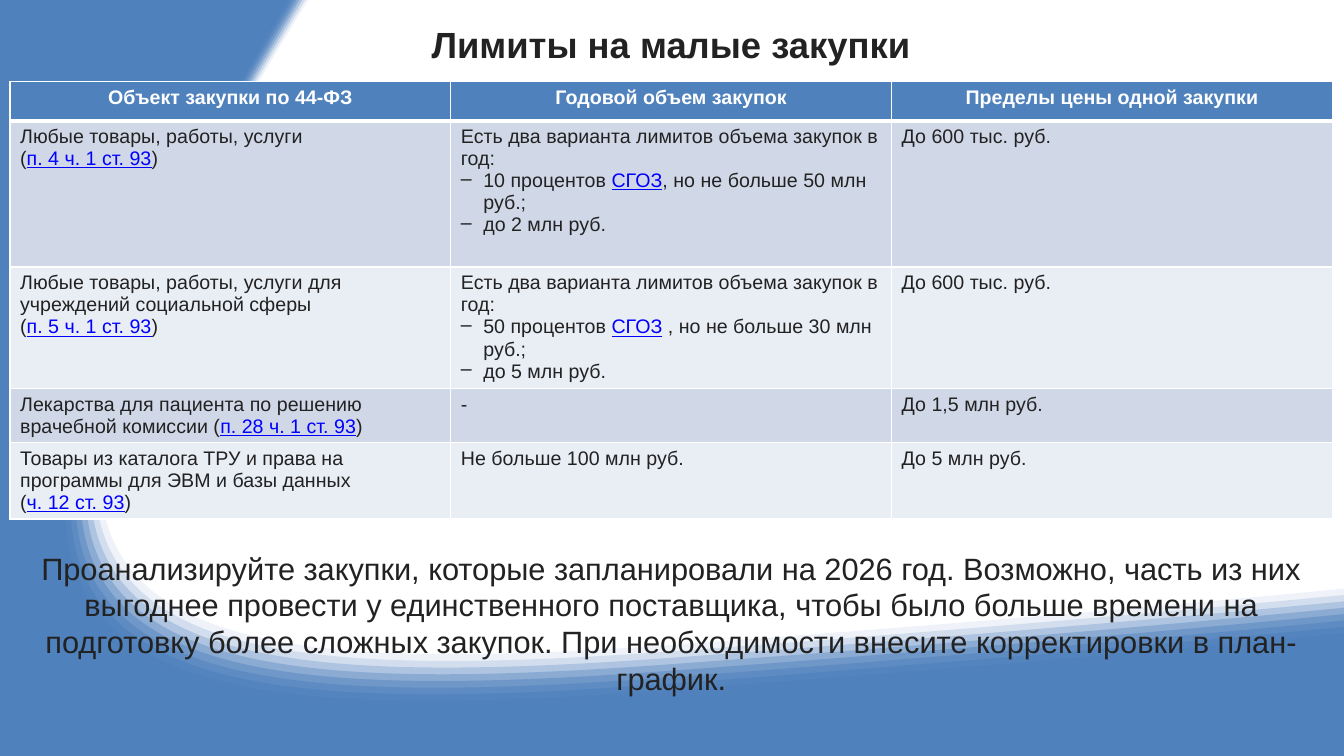
from dataclasses import dataclass

from lxml import etree
from pptx import Presentation
from pptx.dml.color import RGBColor
from pptx.enum.text import MSO_ANCHOR, MSO_AUTO_SIZE, PP_ALIGN
from pptx.oxml.ns import qn
from pptx.util import Pt

LEFT, CENTER = PP_ALIGN.LEFT, PP_ALIGN.CENTER
TOP, MIDDLE = MSO_ANCHOR.TOP, MSO_ANCHOR.MIDDLE
NO_AUTOFIT = MSO_AUTO_SIZE.NONE

# Text between bars is a reference; in a tuple, the items after the first are bulleted.
TITLE = "Лимиты на малые закупки"
HEADER = ("Объект закупки по 44-ФЗ", "Годовой объем закупок", "Пределы цены одной закупки")
LIMITS = [
    ("Любые товары, работы, услуги (|п. 4 ч. 1 ст. 93|)",
     ("Есть два варианта лимитов объема закупок в год:",
      "10 процентов |СГОЗ|, но не больше 50 млн руб.;",
      "до 2 млн руб."),
     "До 600 тыс. руб."),
    ("Любые товары, работы, услуги для учреждений социальной сферы (|п. 5 ч. 1 ст. 93|)",
     ("Есть два варианта лимитов объема закупок в год:",
      "50 процентов |СГОЗ| , но не больше 30 млн руб.;",
      "до 5 млн руб."),
     "До 600 тыс. руб."),
    ("Лекарства для пациента по решению врачебной комиссии (|п. 28 ч. 1 ст. 93|)",
     "-",
     "До 1,5 млн руб."),
    ("Товары из каталога ТРУ и права на программы для ЭВМ и базы данных (|ч. 12 ст. 93|)",
     "Не больше 100 млн руб.",
     "До 5 млн руб."),
]
ADVICE = ("Проанализируйте закупки, которые запланировали на 2026 год. Возможно, часть из них "
          "выгоднее провести у единственного поставщика, чтобы было больше времени на подготовку "
          "более сложных закупок. При необходимости внесите корректировки в план-график.")


@dataclass(frozen=True)
class Theme:
    font: str = "Arial"
    blue: str = "4F81BD"
    white: str = "FFFFFF"
    text: str = "222222"
    link: str = "0000FF"
    stripes: tuple = ("D0D8E8", "E9EDF4")
    title_size: int = 26
    table_size: int = 14
    advice_size: int = 22


THEME = Theme()
WIDTH, HEIGHT = 960, 540
MARGIN, CONTENT_WIDTH = 7.2, 944.6
TITLE_TOP, TITLE_HEIGHT = 4.3, 54
TABLE_TOP = 58.3
ROW_HEIGHTS = (28, 104.5, 86.5, 39, 54.5)
ADVICE_TOP, ADVICE_HEIGHT = 388.8, 147
BULLET_INDENT = 16
THIN, THICK = 1, 3
NBSP = chr(160)

# Wave edges from the top of the slide to its right side: three joined Bezier curves each.
BLUE_EDGE = [(190.8, 0), (190.8, 0), (172.8, 29.5), (141.1, 82.8), (-116.6, 512.6),
             (76.3, 543.6), (471.6, 514.1), (774, 491), (960, 472.3), (960, 472.3)]
PALEST_EDGE = [(220.3, 0), (219.6, 0.7), (202.3, 28.8), (172.8, 78.5), (-52.6, 455),
               (115.9, 488.2), (496.8, 459.4), (781.2, 438.5), (958.3, 420.5), (960, 420.5)]
DARKEST_EDGE = [(199.4, 0), (195.1, 7.9), (178.6, 37.4), (151.9, 82.1), (-102.2, 506.2),
                (87.8, 536.4), (478.1, 506.9), (754.6, 486), (935.3, 468.7), (960, 465.8)]
BAND_COUNT = 11
UNITS_PER_POINT = 10


def add_step(path, tag, points):
    step = etree.SubElement(path, qn(tag))
    for x, y in points:
        etree.SubElement(step, qn("a:pt"), x=str(round(x * UNITS_PER_POINT)),
                         y=str(round(y * UNITS_PER_POINT)))


def add_area(slide, edge, closing_points=(), closing_edge=(), opacity=100):
    """Fill the area between a curved edge and closing points or a second curved edge."""
    right, bottom = WIDTH * UNITS_PER_POINT, HEIGHT * UNITS_PER_POINT
    builder = slide.shapes.build_freeform(0, 0, scale=Pt(1 / UNITS_PER_POINT))
    builder.add_line_segments([(right, 0), (right, bottom), (0, bottom)], close=True)
    area = builder.convert_to_shape()
    path = next(area._element.iter(qn("a:path")))
    for step in list(path):
        path.remove(step)
    for tag, curves in (("a:moveTo", edge), ("a:lnTo", closing_edge)):
        if curves:
            add_step(path, tag, curves[:1])
        for first in range(1, len(curves), 3):
            add_step(path, "a:cubicBezTo", curves[first:first + 3])
    for point in closing_points:
        add_step(path, "a:lnTo", [point])
    etree.SubElement(path, qn("a:close"))

    area.shadow.inherit = False
    area.line.fill.background()
    area.fill.solid()
    area.fill.fore_color.rgb = RGBColor.from_string(THEME.blue)
    if opacity < 100:
        color = next(area._element.spPr.iter(qn("a:srgbClr")))
        etree.SubElement(color, qn("a:alpha"), val=str(opacity * 1000))


def add_waves(slide):
    add_area(slide, BLUE_EDGE, closing_points=[(WIDTH, HEIGHT), (0, HEIGHT), (0, 0)])
    for band in range(BAND_COUNT):
        share = band / (BAND_COUNT - 1)
        edge = [tuple(a + (b - a) * share for a, b in zip(palest, darkest))
                for palest, darkest in zip(PALEST_EDGE, DARKEST_EDGE)]
        add_area(slide, edge, closing_edge=BLUE_EDGE[::-1],
                 opacity=round(100 * (band + 1) / BAND_COUNT))


def write(frame, content, size, color=THEME.text, bold=False, align=LEFT):
    lines = (content,) if isinstance(content, str) else content
    for number, line in enumerate(lines):
        paragraph = frame.paragraphs[0] if number == 0 else frame.add_paragraph()
        paragraph.alignment = align
        if number:
            properties = paragraph._p.get_or_add_pPr()
            properties.set("marL", str(Pt(BULLET_INDENT)))
            properties.set("indent", str(-Pt(BULLET_INDENT)))
            etree.SubElement(properties, qn("a:buChar"), char="–")
        for piece, words in enumerate(line.split("|")):
            is_link = piece % 2 == 1
            run = paragraph.add_run()
            run.text = words.replace(" ", NBSP) if is_link else words
            run.font.name = THEME.font
            run.font.size = Pt(size)
            run.font.bold = bold
            run.font.underline = is_link
            run.font.color.rgb = RGBColor.from_string(THEME.link if is_link else color)


def set_borders(cell, top, bottom):
    properties = cell._tc.get_or_add_tcPr()
    widths = {"a:lnL": THIN, "a:lnR": THIN, "a:lnT": top, "a:lnB": bottom}
    for position, (side, width) in enumerate(widths.items()):
        border = etree.Element(qn(side), w=str(Pt(width)))
        fill = etree.SubElement(border, qn("a:solidFill"))
        etree.SubElement(fill, qn("a:srgbClr"), val=THEME.white)
        properties.insert(position, border)


def add_limits(slide):
    rows = [HEADER] + LIMITS
    table = slide.shapes.add_table(len(rows), len(HEADER), Pt(MARGIN), Pt(TABLE_TOP),
                                   Pt(CONTENT_WIDTH), Pt(sum(ROW_HEIGHTS))).table
    for row, (height, contents) in enumerate(zip(ROW_HEIGHTS, rows)):
        table.rows[row].height = Pt(height)
        for column, content in enumerate(contents):
            cell = table.cell(row, column)
            cell.fill.solid()
            fill = THEME.stripes[(row - 1) % 2] if row else THEME.blue
            cell.fill.fore_color.rgb = RGBColor.from_string(fill)
            set_borders(cell, THICK if row == 1 else THIN, THICK if row == 0 else THIN)
            if row:
                write(cell.text_frame, content, THEME.table_size)
            else:
                write(cell.text_frame, content, THEME.table_size, color=THEME.white,
                      bold=True, align=CENTER)


def place_text(box, top, height, anchor):
    box.left, box.top, box.width, box.height = Pt(MARGIN), Pt(top), Pt(CONTENT_WIDTH), Pt(height)
    box.text_frame.word_wrap = True
    box.text_frame.auto_size = NO_AUTOFIT
    box.text_frame.vertical_anchor = anchor


def main():
    presentation = Presentation()
    presentation.slide_width, presentation.slide_height = Pt(WIDTH), Pt(HEIGHT)
    slide = presentation.slides.add_slide(presentation.slide_layouts[5])
    add_waves(slide)

    title = slide.shapes.title
    slide.shapes._spTree.append(title._element)  # bring in front of the waves
    place_text(title, TITLE_TOP, TITLE_HEIGHT, MIDDLE)
    write(title.text_frame, TITLE, THEME.title_size, bold=True, align=CENTER)

    add_limits(slide)

    advice = slide.shapes.add_textbox(0, 0, 0, 0)
    place_text(advice, ADVICE_TOP, ADVICE_HEIGHT, TOP)
    write(advice.text_frame, ADVICE, THEME.advice_size, align=CENTER)
    presentation.save("out.pptx")


if __name__ == "__main__":
    main()
